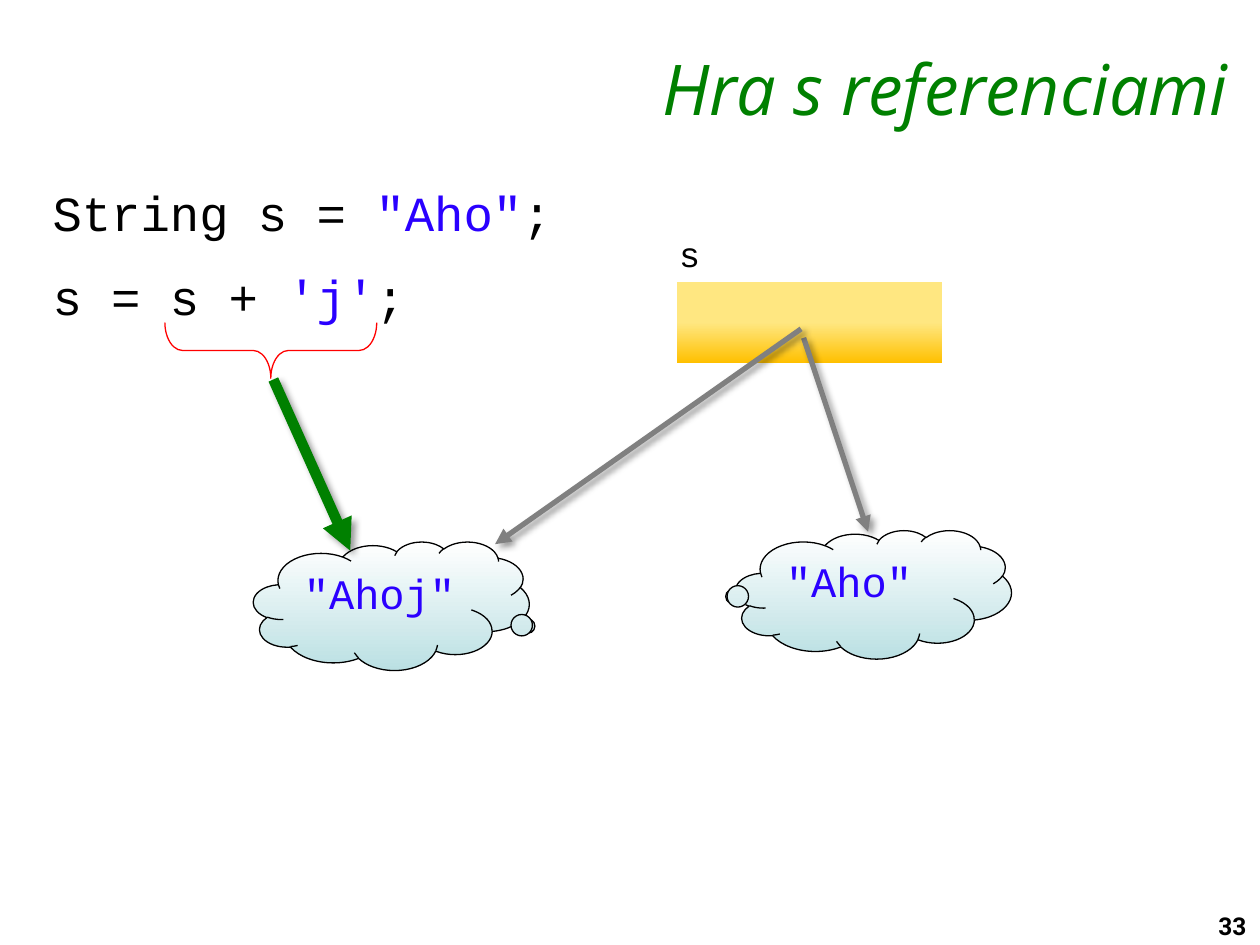
"""Build the slide on string references: code, a variable and two objects."""
from lxml import etree
from pptx import Presentation
from pptx.dml.color import RGBColor
from pptx.enum import shapes, text
from pptx.oxml.ns import qn
from pptx.util import Cm, Pt

THEME = {
    "black": "000000", "green": "008000", "blue": "2A00FF", "red": "FF0000", "grey": "808080",
    "cloud": [(0, "FFFFFF"), (1, "BBE0E3")],
    "box": [(0.5, "FFE781"), (1, "FFC000")],
    "code": "Courier New", "head": "Open Sans", "num": "Roboto",
    "title": 40, "body": 28, "value": 24, "label": 20, "page": 14,
}
KIND = shapes.MSO_SHAPE

TITLE = ("Hra s referenciami", (5.82, 0.79, 19.18, 1.47))
PAGE = ("33", (24.31, 18.24, 1.3, 0.84))
NAME = ("s", (13.44, 4.57, 6.86, 1.09))
CODE = [
    [("String s = ", "black"), ('"Aho"', "blue"), (";", "black")],
    [("s = s + ", "black"), ("'j'", "blue"), (";", "black")],
]
AREA = (0.81, 3.56, 23.83, 14.73)
CLOUDS = [
    ('"Aho"', (14.83, 10.69), (-0.502, 0.015)),
    ('"Ahoj"', (5.11, 10.92), (0.491, 0.156)),
]
CLOUD_SIZE = (5.56, 2.59)
BRACE = (4.9, 4.93, 1.12, 4.27)
BOX = (13.64, 5.69, 5.36, 1.63)
ARROWS = [
    ((16.2, 6.81), (17.5, 10.72), "grey", 3),
    ((16.15, 6.63), (9.98, 10.97), "grey", 3),
    ((5.51, 7.65), (7.06, 11.1), "green", 6),
]


def tint(name):
    return RGBColor.from_string(THEME.get(name, name))


def style(font, face, size, color=None):
    font.name, font.size = THEME[face], Pt(THEME[size])
    if color:
        font.color.rgb = tint(color)


def write(slide, item, face, size, color="black"):
    words, area = item
    frame = slide.shapes.add_textbox(*map(Cm, area)).text_frame
    frame.word_wrap = True
    para = frame.paragraphs[0]
    para.text = words
    style(para.font, face, size, color)
    return para


def code(slide):
    frame = slide.shapes.add_textbox(*map(Cm, AREA)).text_frame
    frame.word_wrap = True
    for i, parts in enumerate(CODE):
        para = frame.add_paragraph() if i else frame.paragraphs[0]
        para.space_before, para.space_after = Pt(7 if i else 0), Pt(7)
        style(para.font, "code", "body")
        for words, color in parts:
            run = para.add_run()
            run.text = words
            run.font.color.rgb = tint(color)


def shape(slide, kind, area, stops=None, line=None):
    item = slide.shapes.add_shape(kind, *map(Cm, area))
    item.shadow.inherit = False
    if stops:
        item.fill.gradient()
        item.fill.gradient_angle = 270
        for stop, (pos, color) in zip(item.fill.gradient_stops, THEME[stops]):
            stop.position, stop.color.rgb = pos, tint(color)
    else:
        item.fill.background()
    if line:
        item.line.color.rgb, item.line.width = tint(line), Pt(0.75)
    else:
        item.line.fill.background()
    return item


def cloud(slide, words, spot, tip):
    item = shape(slide, KIND.CLOUD_CALLOUT, spot + CLOUD_SIZE, "cloud", "black")
    for i, value in enumerate(tip):
        item.adjustments[i] = value
    frame = item.text_frame
    frame.vertical_anchor = text.MSO_ANCHOR.TOP
    para = frame.paragraphs[0]
    para.text, para.alignment = words, text.PP_ALIGN.LEFT
    style(para.font, "code", "value", "blue")


def arrow(slide, start, end, color, width):
    item = slide.shapes.add_connector(shapes.MSO_CONNECTOR.STRAIGHT, *map(Cm, start + end))
    item.line.color.rgb, item.line.width = tint(color), Pt(width)
    etree.SubElement(item.line._get_or_add_ln(), qn("a:tailEnd"), type="triangle")
    props = item._element.spPr
    shade = etree.SubElement(
        etree.SubElement(props, qn("a:effectLst")), qn("a:outerShdw"),
        blurRad=str(Pt(4)), dist=str(Pt(3)), dir="2700000", rotWithShape="0")
    black = etree.SubElement(shade, qn("a:srgbClr"), val=THEME["black"])
    etree.SubElement(black, qn("a:alpha"), val="40000")


def main():
    deck = Presentation()
    deck.slide_width, deck.slide_height = Cm(25.4), Cm(19.05)
    slide = deck.slides.add_slide(deck.slide_layouts[6])
    write(slide, PAGE, "num", "page").font.bold = True
    title = write(slide, TITLE, "head", "title", "green")
    title.alignment, title.font.italic = text.PP_ALIGN.RIGHT, True
    code(slide)
    for item in CLOUDS:
        cloud(slide, *item)
    brace = shape(slide, KIND.LEFT_BRACE, BRACE, line="red")
    brace.rotation = 270
    brace.adjustments[0] = 0.317
    write(slide, NAME, "code", "label")
    shape(slide, KIND.RECTANGLE, BOX, "box")
    for item in ARROWS:
        arrow(slide, *item)
    deck.save("out.pptx")


if __name__ == "__main__":
    main()
